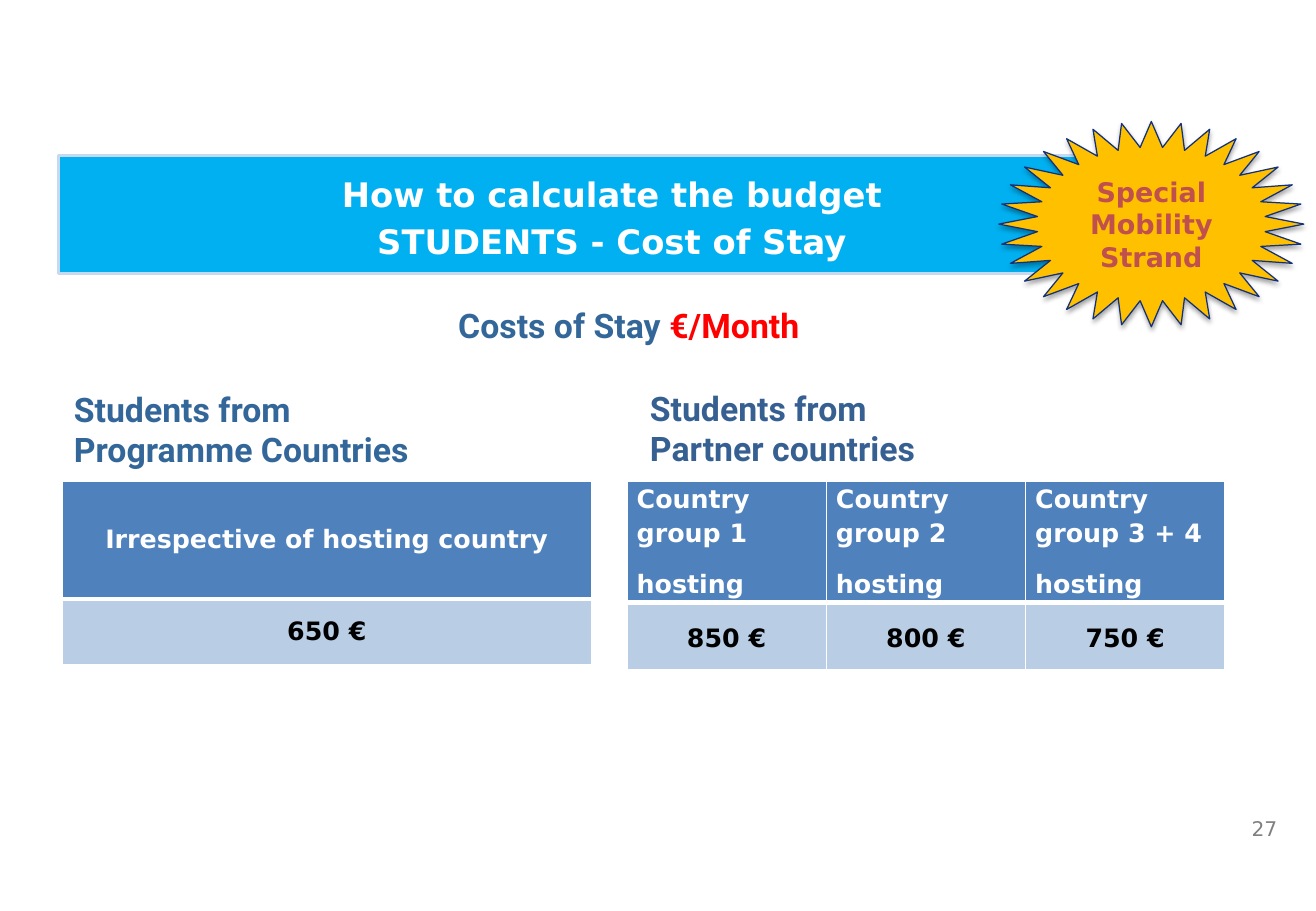
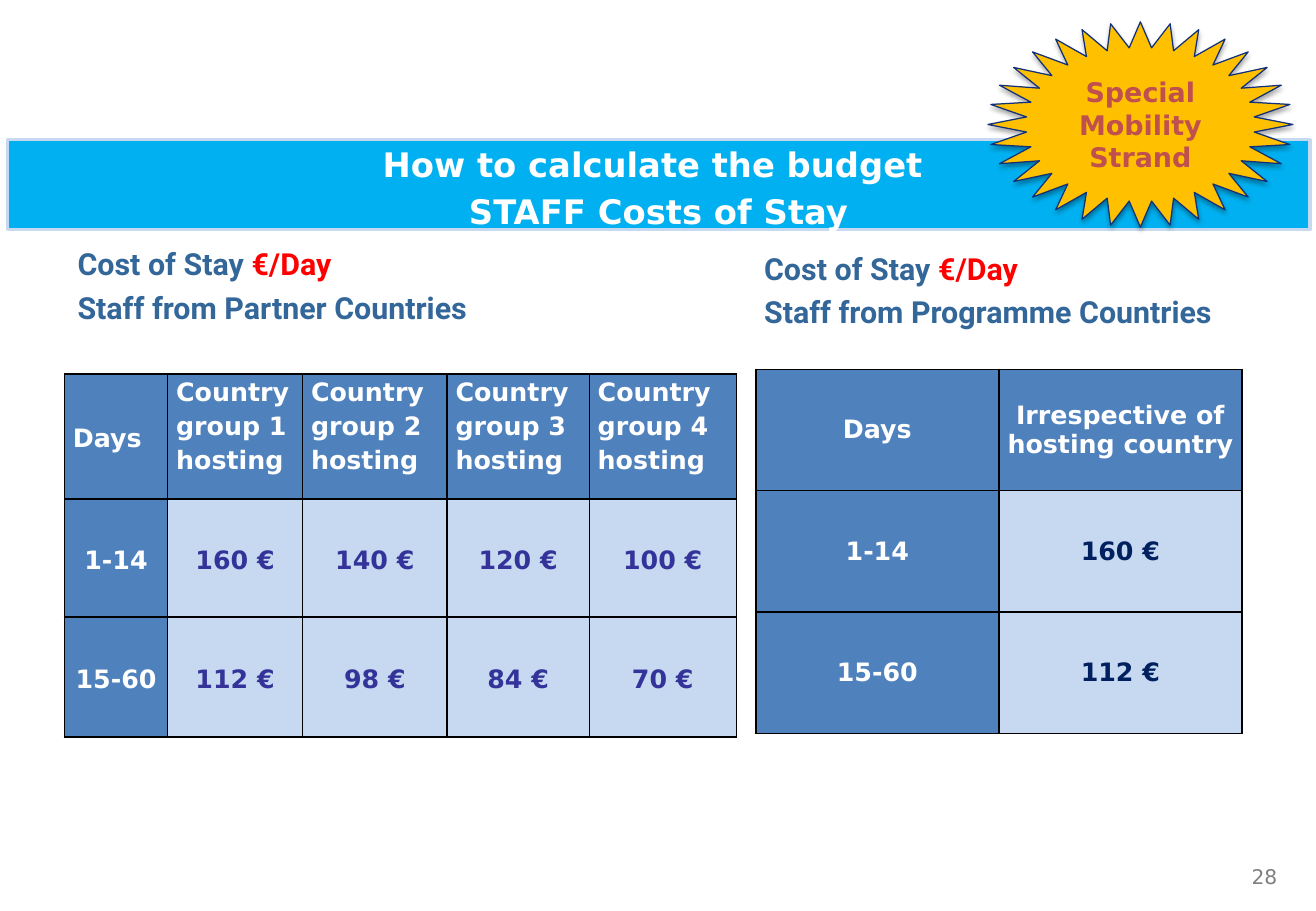
"""Build two slides on the cost of stay for students and staff."""
from lxml import etree
from pptx import Presentation
from pptx.dml.color import RGBColor
from pptx.enum.shapes import MSO_SHAPE
from pptx.enum.text import MSO_ANCHOR, PP_ALIGN
from pptx.oxml.ns import qn
from pptx.util import Inches, Pt

COLORS = {
    "band": "00B0F0", "pale": "C6D9F1", "white": "FFFFFF", "black": "000000",
    "heading": "336699", "partner": "376092", "red": "FF0000", "number": "808080",
    "header": "4F81BD", "value": "B9CDE5", "violet": "333399", "navy": "002060",
    "star": "FFC000", "star_line": "133176", "star_text": "C0504D",
}
SANS, HEAD = "DejaVu Sans", "Roboto"


def rgb(name):
    return RGBColor.from_string(COLORS[name])


def add_color(parent, name):
    fill = etree.SubElement(parent, qn("a:srgbClr"))
    fill.set("val", COLORS[name])
    return fill


def write(tf, paras, *, size, color, font=SANS, bold=True, align=PP_ALIGN.LEFT,
          line=None, before=0, after=0):
    for i, runs in enumerate(paras):
        p = tf.paragraphs[0] if i == 0 else tf.add_paragraph()
        p.alignment = align
        p.space_after = Pt(after)
        if line:
            p.line_spacing = line
        if i and before:
            p.space_before = Pt(before)
        for text, tint in [(runs, color)] if isinstance(runs, str) else runs:
            for n, part in enumerate(text.split("\n")):
                if n:
                    p.add_line_break()
                r = p.add_run()
                r.text = part
                r.font.name, r.font.size, r.font.bold = font, Pt(size), bold
                r.font.color.rgb = rgb(tint)


class Deck:
    def __init__(self):
        self.prs = Presentation()
        self.prs.slide_width, self.prs.slide_height = Inches(10.83), Inches(7.5)

    def slide(self):
        self.s = self.prs.slides.add_slide(self.prs.slide_layouts[6])

    def shape(self, kind, box, fill, line, width):
        sp = self.s.shapes.add_shape(kind, *map(Inches, box))
        sp.shadow.inherit = False
        sp.fill.solid()
        sp.fill.fore_color.rgb = rgb(fill)
        sp.line.color.rgb = rgb(line)
        sp.line.width = Pt(width)
        sp.text_frame.word_wrap = True
        sp.text_frame.vertical_anchor = MSO_ANCHOR.MIDDLE
        return sp

    def title(self, box, text):
        sp = self.shape(MSO_SHAPE.ROUNDED_RECTANGLE, box, "band", "pale", 2)
        sp.adjustments[0] = 0
        write(sp.text_frame, [text], size=20, color="white",
              align=PP_ALIGN.CENTER, line=1.15, after=10)

    def star(self, x, y):
        sp = self.shape(MSO_SHAPE.STAR_32_POINT, (x, y, 2.51, 1.69), "star", "star_line", 0.75)
        tf = sp.text_frame
        tf.margin_left = tf.margin_right = tf.margin_top = tf.margin_bottom = 0
        write(tf, ["Special Mobility Strand"], size=16, color="star_text",
              align=PP_ALIGN.CENTER)
        shadow = etree.SubElement(sp._element.spPr.find(qn("a:effectLst")), qn("a:outerShdw"))
        for key, val in (("blurRad", Pt(3.1)), ("dist", Pt(1.8)), ("dir", 90 * 60000)):
            shadow.set(key, str(int(val)))
        shadow.set("rotWithShape", "0")
        etree.SubElement(add_color(shadow, "black"), qn("a:alpha")).set("val", "35000")

    def text(self, box, paras, **fmt):
        tf = self.s.shapes.add_textbox(*map(Inches, box)).text_frame
        tf.word_wrap = True
        write(tf, paras, **fmt)

    def heading(self, box, paras, **fmt):
        self.text(box, paras, **{"size": 20, "color": "heading", "font": HEAD, **fmt})

    def number(self, y, text):
        self.text((8.08, y, 2.53, 0.52), [text], size=12, color="number",
                  bold=False, align=PP_ALIGN.RIGHT)

    def border(self, cell, color, bottom):
        tc_pr = cell._tc.get_or_add_tcPr()
        for side, width in (("L", 1), ("R", 1), ("T", 1), ("B", bottom)):
            ln = etree.SubElement(tc_pr, qn(f"a:ln{side}"))
            ln.set("w", str(Pt(width)))
            add_color(etree.SubElement(ln, qn("a:solidFill")), color)

    def table(self, x, y, cols, rows, data, *, margin, value_fill, value_color,
              border, header_bottom=1, side=False, roomy=False):
        frame = self.s.shapes.add_table(len(rows), len(cols), Inches(x), Inches(y),
                                        Inches(sum(cols)), Inches(sum(rows)))
        tbl = frame.table
        tbl.horz_banding = False
        for col, width in zip(tbl.columns, cols):
            col.width = Inches(width)
        for row, height in zip(tbl.rows, rows):
            row.height = Inches(height)
        spacing = {"line": 1.15, "after": 10} if roomy else {}
        for i, values in enumerate(data):
            for j, value in enumerate(values):
                cell = tbl.cell(i, j)
                label = side and j == 0
                head = i == 0 or label
                self.border(cell, border, header_bottom if i == 0 else 1)
                cell.fill.solid()
                cell.fill.fore_color.rgb = rgb("header" if head else value_fill)
                cell.margin_left = cell.margin_right = Inches(margin)
                cell.margin_top = cell.margin_bottom = 0
                top = roomy and i == 0 and not label
                cell.vertical_anchor = MSO_ANCHOR.TOP if top else MSO_ANCHOR.MIDDLE
                write(cell.text_frame, [value] if isinstance(value, str) else value,
                      size=15, color="white" if head else value_color,
                      align=PP_ALIGN.LEFT if roomy and i == 0 else PP_ALIGN.CENTER,
                      **spacing)


def students(deck):
    deck.slide()
    deck.title((0.48, 1.28, 9.21, 0.97),
               "How to calculate the budget \nSTUDENTS - Cost of Stay ")
    deck.heading((2.66, 2.46, 5.03, 0.79),
                 [[("Costs of Stay ", "heading"), ("€/Month", "red")]],
                 align=PP_ALIGN.CENTER)
    deck.number(6.67, "27")
    deck.heading((0.51, 3.15, 3.32, 0.77), ["Students from Programme Countries"])
    deck.heading((5.25, 3.14, 3.96, 0.77), ["Students from", "Partner countries"],
                 color="partner")
    look = dict(value_fill="value", value_color="black", border="white", header_bottom=3)
    deck.table(0.51, 3.96, [4.36], [0.97, 0.54],
               [["Irrespective of hosting country"], ["650 €"]], margin=0.05, **look)
    groups = [[f"Country group {g}", "hosting"] for g in ("1", "2", "3 + 4")]
    deck.table(5.16, 3.96, [1.64] * 3, [1, 0.55],
               [groups, ["850 €", "800 €", "750 €"]], margin=0.08, roomy=True, **look)
    deck.star(8.22, 1)


def staff(deck):
    deck.slide()
    deck.title((0.06, 1.15, 10.72, 0.74),
               "How to calculate the budget \nSTAFF Costs of Stay")
    for x, y, origin in ((0.54, 1.97, "Partner"), (6.19, 2.01, "Programme")):
        deck.heading((x, y, 4.5, 0.8),
                     [[("Cost of Stay ", "heading"), ("€/Day", "red")],
                      f"Staff from {origin} Countries"], size=18, before=4.2)
    deck.number(7.07, "28")
    look = dict(value_fill="pale", border="black", side=True)
    deck.table(0.53, 3.08, [0.85, 1.11, 1.19, 1.17, 1.21], [1.03, 0.97, 0.99],
               [["Days"] + [f"Country group {g} hosting" for g in range(1, 5)],
                ["1-14", "160 €", "140 €", "120 €", "100 €"],
                ["15-60", "112 €", "98 €", "84 €", "70 €"]],
               margin=0.07, value_color="violet", roomy=True, **look)
    deck.table(6.22, 3.04, [2, 2], [1, 1, 1],
               [["Days", "Irrespective of hosting country"],
                ["1-14", "160 €"], ["15-60", "112 €"]],
               margin=0.05, value_color="navy", **look)
    deck.star(8.13, 0.18)


def main():
    deck = Deck()
    students(deck)
    staff(deck)
    deck.prs.save("out.pptx")


if __name__ == "__main__":
    main()
